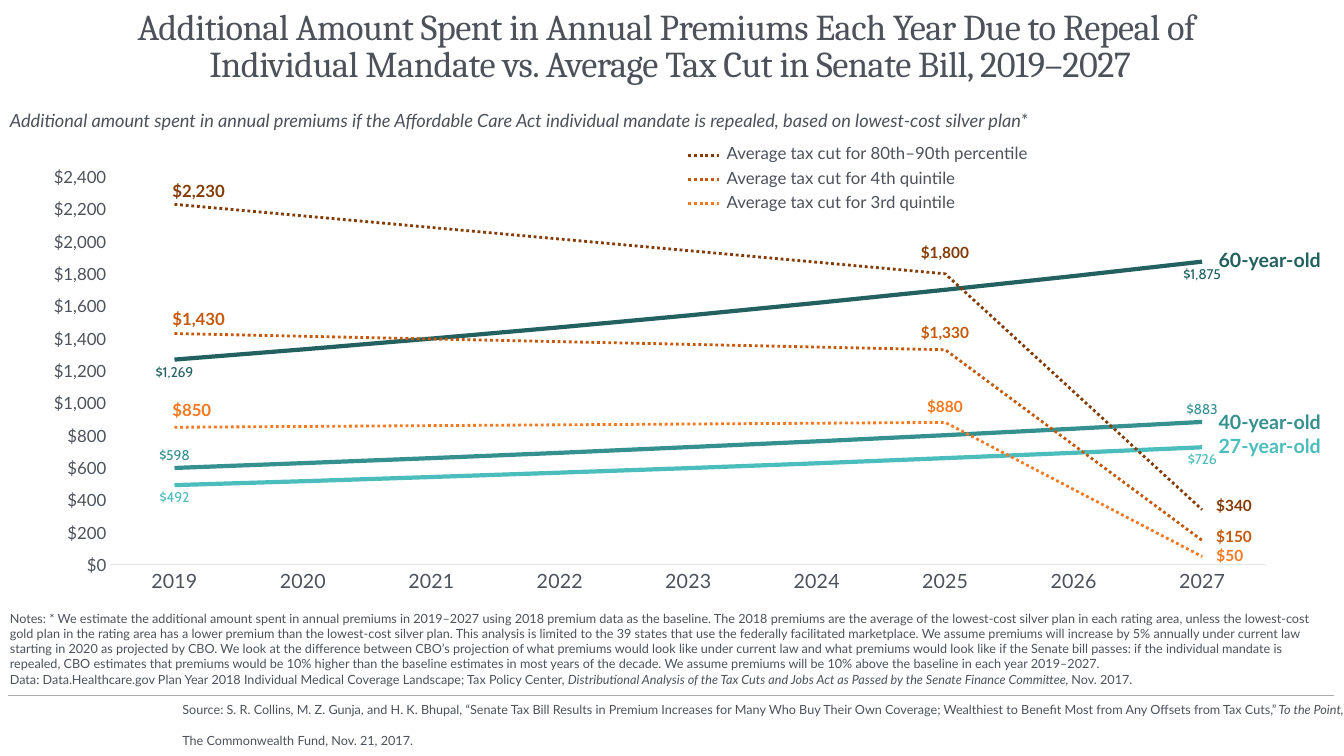
from pptx import Presentation
from pptx.chart.data import CategoryChartData
from pptx.dml.color import RGBColor
from pptx.enum.chart import XL_CHART_TYPE, XL_LABEL_POSITION, XL_TICK_MARK
from pptx.enum.dml import MSO_LINE
from pptx.enum.shapes import MSO_CONNECTOR
from pptx.enum.text import MSO_ANCHOR, PP_ALIGN
from pptx.oxml import parse_xml
from pptx.oxml.ns import nsdecls, qn
from pptx.util import Pt
from lxml import etree

LINE, STRAIGHT = XL_CHART_TYPE.LINE, MSO_CONNECTOR.STRAIGHT
ABOVE, BELOW = XL_LABEL_POSITION.ABOVE, XL_LABEL_POSITION.BELOW
NO_TICK, DOTS = XL_TICK_MARK.NONE, MSO_LINE.ROUND_DOT
TOP, BOTTOM = MSO_ANCHOR.TOP, MSO_ANCHOR.BOTTOM
LEFT, CENTER = PP_ALIGN.LEFT, PP_ALIGN.CENTER

HEX = {
    "text": "4C515A", "rule": "ABABAB", "axis": "E3E5E7",
    "age27": "4ABDBC", "age40": "359190", "age60": "236060",
    "third": "F47920", "fourth": "C5580A", "top": "843B06",
}
DOLLARS = '"$"#,##0'
YEARS = range(2019, 2028)
GROWTH = 1.05
AGES = [
    ("27-year-old", "age27", 491.52, BELOW, 306.7),
    ("40-year-old", "age40", 597.96, ABOVE, 289.4),
    ("60-year-old", "age60", 1268.94, BELOW, 173.5),
]
CUTS = [
    ("Average tax cut for 3rd quintile", "third",
     {2019: 850, 2025: 880, 2027: 50}),
    ("Average tax cut for 4th quintile", "fourth",
     {2019: 1430, 2025: 1330, 2027: 150}),
    ("Average tax cut for 80th–90th percentile", "top",
     {2019: 2230, 2025: 1800, 2027: 340}),
]
SPOTS = {
    "third": [(116, 282.2), (611, 280.1), (832, 386.6)],
    "fourth": [(116, 216.7), (611, 227.5), (835, 373)],
    "top": [(116, 125.3), (611, 169.9), (835, 350.6)],
}
TITLE = ("Additional Amount Spent in Annual Premiums Each Year Due to Repeal of \n"
         "Individual Mandate vs. Average Tax Cut in Senate Bill, 2019–2027")
LEAD = ("Additional amount spent in annual premiums if the Affordable Care Act "
        "individual mandate is repealed, based on lowest-cost silver plan*")
METHOD = [
    "Notes: * We estimate the additional amount spent in annual premiums in "
    "2019–2027 using 2018 premium data as the baseline.",
    "The 2018 premiums are the average of the lowest-cost silver plan in each "
    "rating area, unless the lowest-cost gold plan in the rating area has a lower "
    "premium than the lowest-cost silver plan.",
    "This analysis is limited to the 39 states that use the federally facilitated "
    "marketplace.",
    "We assume premiums will increase by 5% annually under current law starting in "
    "2020 as projected by CBO.",
    "We look at the difference between CBO’s projection of what premiums would look "
    "like under current law and what premiums would look like if the Senate bill "
    "passes: if the individual mandate is repealed, CBO estimates that premiums "
    "would be 10% higher than the baseline estimates in most years of the decade.",
    "We assume premiums will be 10% above the baseline in each year 2019–2027.",
]
NOTES = [
    " ".join(METHOD),
    "Data: Data.Healthcare.gov Plan Year 2018 Individual Medical Coverage Landscape; "
    "Tax Policy Center|, Distributional Analysis of the Tax Cuts and Jobs Act as "
    "Passed by the Senate Finance Committee|, Nov. 2017.",
]
SOURCE = [
    "Source: S. R. Collins, M. Z. Gunja, and H. K. Bhupal, “Senate Tax Bill Results "
    "in Premium Increases for Many Who Buy Their Own Coverage; Wealthiest to Benefit "
    "Most from Any Offsets from Tax Cuts,” |To the Point,",
    "The Commonwealth Fund, Nov. 21, 2017.",
]


def paint(name):
    return RGBColor.from_string(HEX[name])


def style(font, size, color="text", face="Lato", bold=False, italic=False):
    font.size, font.name, font.bold, font.italic = Pt(size), face, bold, italic
    font.color.rgb = paint(color)


def add_text(slide, text, x, y, w, h, size=9, color="text", face="Lato",
             bold=False, italic=False, align=LEFT, anchor=TOP, pad=True,
             lead=None, gap=0, track=0):
    frame = slide.shapes.add_textbox(Pt(x), Pt(y), Pt(w), Pt(h)).text_frame
    frame.word_wrap, frame.vertical_anchor = True, anchor
    if not pad:
        frame.margin_left = frame.margin_right = 0
        frame.margin_top = frame.margin_bottom = 0
    for i, words in enumerate([text] if isinstance(text, str) else text):
        para = frame.add_paragraph() if i else frame.paragraphs[0]
        para.alignment, para.line_spacing = align, lead
        if i and gap:
            para.space_before = Pt(gap)
        for j, part in enumerate(words.split("|")):
            for k, piece in enumerate(part.split("\n")):
                if k:
                    para.add_line_break()
                run = para.add_run()
                run.text = piece
                style(run.font, size, color, face, bold, italic or j % 2 == 1)
                if track:
                    run.font._element.set("spc", str(track))


def draw(line, color, width, dash=None):
    line.color.rgb, line.width = paint(color), Pt(width)
    if dash:
        line.dash_style = dash


def add_line(slide, x1, x2, y, color, width, dash=None):
    rule = slide.shapes.add_connector(STRAIGHT, Pt(x1), Pt(y), Pt(x2), Pt(y))
    draw(rule.line, color, width, dash)
    etree.SubElement(rule._element.spPr, qn("a:effectLst"))


def set_plot(chart, x, y, w, h):
    area = chart.element.chart.plotArea
    for old in area.findall(qn("c:layout")):
        area.remove(old)
    parts = "".join(f'<c:{tag} val="{val}"/>' for tag, val in [
        ("layoutTarget", "inner"), ("xMode", "edge"), ("yMode", "edge"),
        ("x", x), ("y", y), ("w", w), ("h", h)])
    area.insert(0, parse_xml(
        f'<c:layout {nsdecls("c")}><c:manualLayout>{parts}</c:manualLayout></c:layout>'))


def set_axes(chart):
    cat, val = chart.category_axis, chart.value_axis
    for axis, size in [(cat, 14), (val, 12)]:
        axis.major_tick_mark = axis.minor_tick_mark = NO_TICK
        axis.has_major_gridlines = False
        style(axis.tick_labels.font, size)
    draw(cat.format.line, "axis", 0.75)
    val.format.line.fill.background()
    val.minimum_scale, val.maximum_scale, val.major_unit = 0, 2400, 200
    val.tick_labels.number_format = DOLLARS
    val.tick_labels.number_format_is_linked = False


def label_ends(series, color, place):
    labels = series.data_labels
    labels.number_format, labels.number_format_is_linked = DOLLARS, False
    labels.show_value = False
    for i in (0, len(YEARS) - 1):
        label = series.points[i].data_label
        style(label.font, 10, color, "Cabin")
        label.position = place


def add_costs(slide):
    data = CategoryChartData(number_format=DOLLARS)
    data.categories = [str(year) for year in YEARS]
    for name, _, base, _, _ in AGES:
        data.add_series(name, [round(base * GROWTH ** n) for n in range(len(YEARS))])
    for name, _, cuts in CUTS:
        data.add_series(name, [cuts.get(year) for year in YEARS])
    chart = slide.shapes.add_chart(
        LINE, Pt(9.4), Pt(84.2), Pt(937.4), Pt(348.5), data).chart
    chart.has_legend = chart.has_title = False
    style(chart.font, 10, face="Cabin")
    set_plot(chart, 0.074, 0.121, 0.881, 0.795)
    set_axes(chart)
    chart.element.chart.find(qn("c:dispBlanksAs")).set("val", "span")
    lines = list(chart.plots[0].series)
    for series in lines:
        series.smooth = False
    for series, (_, color, _, place, _) in zip(lines, AGES):
        draw(series.format.line, color, 3)
        label_ends(series, color, place)
    for series, (_, color, _) in zip(lines[len(AGES):], CUTS):
        draw(series.format.line, color, 2, DOTS)


def add_tags(slide):
    for name, color, _, _, y in AGES:
        add_text(slide, name, 863.3, y, 96, 24.2, size=14, color=color, bold=True)
    for _, color, cuts in CUTS:
        for i, (cost, (x, y)) in enumerate(zip(cuts.values(), SPOTS[color])):
            add_text(slide, f"${cost:,}", x, y, (120, 128, 93)[i], 21,
                     size=11 if i else 12, color=color, bold=True,
                     align=CENTER if i else LEFT)


def add_key(slide):
    for i, (name, color, _) in enumerate(reversed(CUTS)):
        y = 98.7 + 17.3 * i
        add_text(slide, name, 512, y, 306, 21.6, size=12)
        add_line(slide, 491.8, 514.8, y + 12.2, color, 2, DOTS)


def main():
    deck = Presentation()
    deck.slide_width, deck.slide_height = Pt(960), Pt(540)
    slide = deck.slides.add_slide(deck.slide_layouts[6])
    add_text(slide, SOURCE, 130.3, 501.8, 829.7, 32.4, anchor=BOTTOM, pad=False, gap=11)
    add_line(slide, 5.8, 952.6, 496.8, "rule", 0.75)
    add_text(slide, TITLE, 0, 7.2, 957.6, 72, size=26, face="Cambria",
             align=CENTER, pad=False, lead=0.86, track=-40)
    add_costs(slide)
    add_text(slide, NOTES, 0, 432, 957.6, 62, anchor=BOTTOM)
    add_tags(slide)
    add_text(slide, LEAD, 0, 74.2, 957.6, 23, size=13, italic=True)
    add_key(slide)
    deck.save("out.pptx")


if __name__ == "__main__":
    main()
